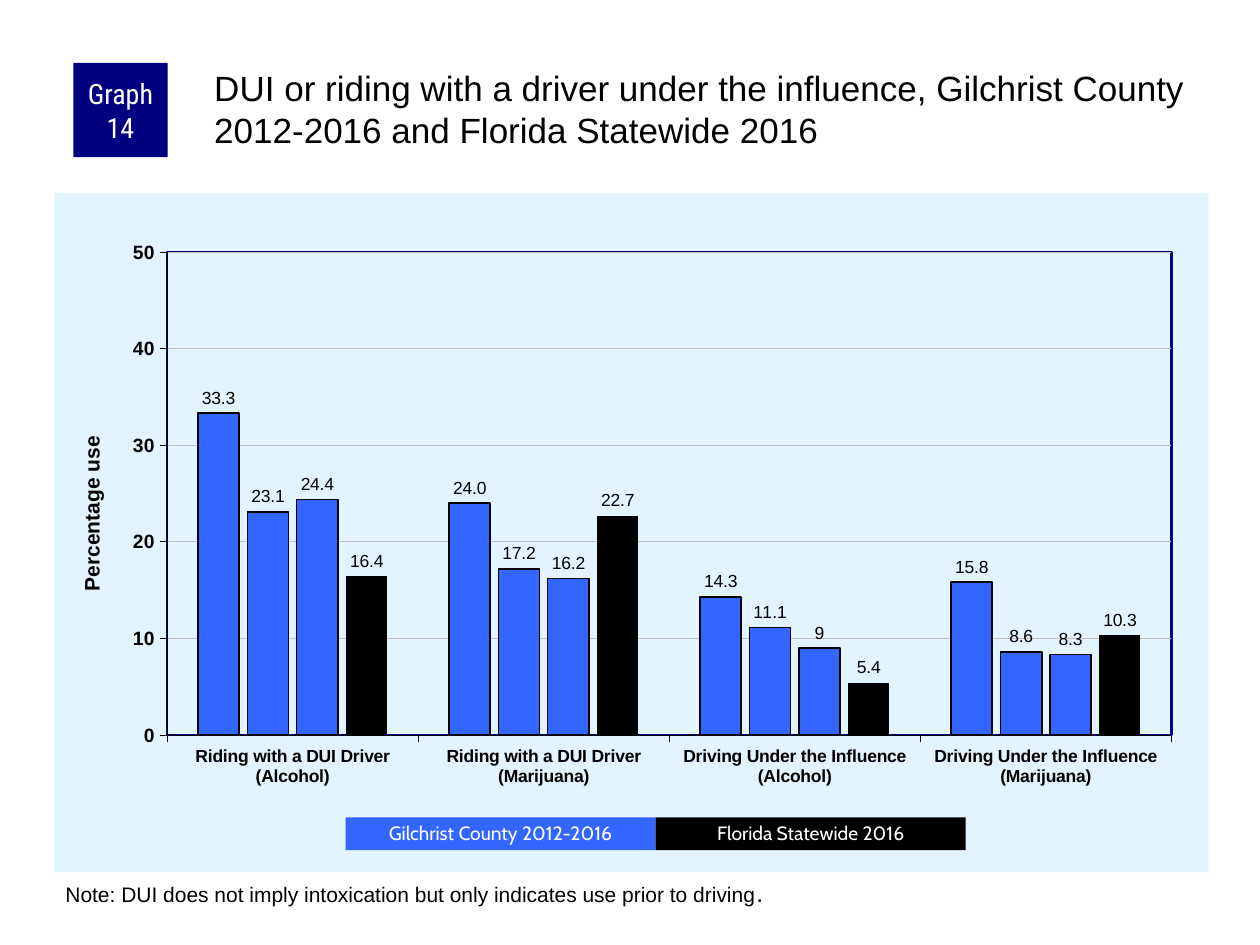
from lxml import etree
from pptx import Presentation
from pptx.chart.data import CategoryChartData
from pptx.dml.color import RGBColor
from pptx.enum.chart import XL_CHART_TYPE, XL_LABEL_POSITION, XL_TICK_MARK
from pptx.enum.shapes import MSO_SHAPE
from pptx.enum.text import MSO_ANCHOR, PP_ALIGN
from pptx.oxml import parse_xml
from pptx.oxml.ns import nsdecls, qn
from pptx.util import Cm, Pt

COLUMNS = XL_CHART_TYPE.COLUMN_CLUSTERED
OUTSIDE = XL_LABEL_POSITION.OUTSIDE_END
TICK_OUT = XL_TICK_MARK.OUTSIDE
RECTANGLE = MSO_SHAPE.RECTANGLE
MIDDLE, TOP = MSO_ANCHOR.MIDDLE, MSO_ANCHOR.TOP
CENTER, LEFT = PP_ALIGN.CENTER, PP_ALIGN.LEFT

BLACK, WHITE, NAVY = "000000", "FFFFFF", "000080"
BLUE, SKY, SILVER = "3366FF", "E1F4FF", "C0C0C0"
BODY_FONT, BADGE_FONT, KEY_FONT = "Arial", "Roboto Condensed", "Cabin"

CATEGORIES = [
    "Riding with a DUI Driver (Alcohol)",
    "Riding with a DUI Driver (Marijuana)",
    "Driving Under the Influence (Alcohol)",
    "Driving Under the Influence (Marijuana)",
]
SERIES = [
    ("Series 1", (33.3, 24, 14.3, 15.8), BLUE, 1, "0.0"),
    ("Series 2", (23.1, 17.2, 11.1, 8.6), BLUE, 1, "0.0"),
    ("Series 3", (24.4, 16.2, 9, 8.3), BLUE, 0.75, "General"),
    ("Series 4", (16.4, 22.7, 5.4, 10.3), BLACK, 0, "General"),
]
PLOT = {"x": 0.098, "y": 0.087, "w": 0.87, "h": 0.711}


def color(code):
    return RGBColor.from_string(code)


def style_font(font, size, code=BLACK, name=BODY_FONT, bold=False):
    font.size = Pt(size)
    font.name = name
    font.bold = bold
    font.color.rgb = color(code)


def style_line(line, code, width):
    line.color.rgb = color(code)
    line.width = Pt(width)


def area_format(fill, line):
    return parse_xml(f"<c:spPr {nsdecls('c', 'a')}>{fill}{line}</c:spPr>")


def solid(code):
    return f'<a:solidFill><a:srgbClr val="{code}"/></a:solidFill>'


class SlideBuilder:
    def __init__(self, deck):
        self.page = deck.slides.add_slide(deck.slide_layouts[6])

    def fill_frame(self, frame, spans, align=LEFT, anchor=TOP, margins=None, spacing=None):
        frame.word_wrap = True
        frame.vertical_anchor = anchor
        if margins:
            side, top, end = margins
            frame.margin_left, frame.margin_top = Cm(side), Cm(top)
            frame.margin_right, frame.margin_bottom = Cm(end), 0
        para = frame.paragraphs[0]
        para.alignment = align
        if spacing:
            para.line_spacing = spacing
        for words, size, code, name in spans:
            span = para.add_run()
            span.text = words
            style_font(span.font, size, code, name)

    def text(self, place, spans, **layout):
        box = self.page.shapes.add_textbox(*map(Cm, place))
        self.fill_frame(box.text_frame, spans, **layout)

    def block(self, place, fill, spans, **layout):
        box = self.page.shapes.add_shape(RECTANGLE, *map(Cm, place))
        box.shadow.inherit = False
        box.fill.solid()
        box.fill.fore_color.rgb = color(fill)
        box.line.fill.background()
        self.fill_frame(box.text_frame, spans, align=CENTER, anchor=MIDDLE, **layout)

    def column_chart(self, place):
        data = CategoryChartData()
        data.categories = CATEGORIES
        for name, values, *_ in SERIES:
            data.add_series(name, values)
        chart = self.page.shapes.add_chart(COLUMNS, *map(Cm, place), data).chart
        chart.has_title = False
        chart.has_legend = False
        style_font(chart.font, 11.5)
        self.style_axes(chart)
        self.style_series(chart.plots[0])
        self.style_areas(chart)

    def style_axes(self, chart):
        for axis, size in ((chart.category_axis, 10), (chart.value_axis, 11)):
            axis.major_tick_mark = TICK_OUT
            style_font(axis.tick_labels.font, size, bold=True)
            style_line(axis.format.line, BLACK, 0.25)
        axis = chart.value_axis
        axis.minimum_scale, axis.maximum_scale, axis.major_unit = 0, 50, 10
        axis.has_major_gridlines = True
        style_line(axis.major_gridlines.format.line, SILVER, 0.25)
        span = axis.axis_title.text_frame.paragraphs[0].add_run()
        span.text = "Percentage use"
        style_font(span.font, 12, bold=True)

    def style_series(self, plot):
        plot.gap_width, plot.overlap = 150, -20
        plot.vary_by_categories = False
        for series, (_, _, fill, width, pattern) in zip(plot.series, SERIES):
            series.format.fill.solid()
            series.format.fill.fore_color.rgb = color(fill)
            if width:
                style_line(series.format.line, BLACK, width)
            else:
                series.format.line.fill.background()
            labels = series.data_labels
            labels.show_value = True
            labels.position = OUTSIDE
            labels.number_format = pattern
            labels.number_format_is_linked = False
            style_font(labels.font, 10)

    def style_areas(self, chart):
        area = chart.element.find(qn("c:chart"))
        area.addnext(area_format(solid(SKY), "<a:ln><a:noFill/></a:ln>"))
        plot = area.find(qn("c:plotArea"))
        for layout in plot.findall(qn("c:layout")):
            plot.remove(layout)
        layout = etree.Element(qn("c:layout"))
        manual = etree.SubElement(layout, qn("c:manualLayout"))
        settings = {"layoutTarget": "inner", "xMode": "edge", "yMode": "edge", **PLOT}
        for tag, value in settings.items():
            etree.SubElement(manual, qn(f"c:{tag}")).set("val", str(value))
        plot.insert(0, layout)
        border = f'<a:ln w="{Pt(1.5)}">{solid(NAVY)}</a:ln>'
        plot.append(area_format("<a:noFill/>", border))


def main():
    deck = Presentation()
    deck.slide_width, deck.slide_height = Cm(25.4), Cm(19.05)
    slide = SlideBuilder(deck)
    slide.column_chart((1.09, 3.89, 23.27, 13.69))
    slide.block((1.48, 1.27, 1.9, 1.9), NAVY,
                [("Graph 14", 16, WHITE, BADGE_FONT)], margins=(0.13, 0, 0.13))
    title = ("DUI or riding with a driver under the influence, "
             "Gilchrist County 2012-2016 and Florida Statewide 2016")
    slide.text((4.24, 1.27, 20.12, 2.11), [(title, 20, BLACK, BODY_FONT)],
               margins=(0.08, 0.08, 0))
    note = "Note: DUI does not imply intoxication but only indicates use prior to driving"
    slide.text((1.07, 17.58, 23.29, 0.86),
               [(note, 12, BLACK, BODY_FONT), (".", 14, BLACK, BODY_FONT)])
    key_left, key_width = 6.97, 6.25
    keys = [("Gilchrist County 2012-2016", BLUE), ("Florida Statewide 2016", BLACK)]
    for index, (label, fill) in enumerate(keys):
        slide.block((key_left + index * key_width, 16.48, key_width, 0.66), fill,
                    [(label, 11, WHITE, KEY_FONT)], spacing=0.9)
    deck.save("out.pptx")


if __name__ == "__main__":
    main()
